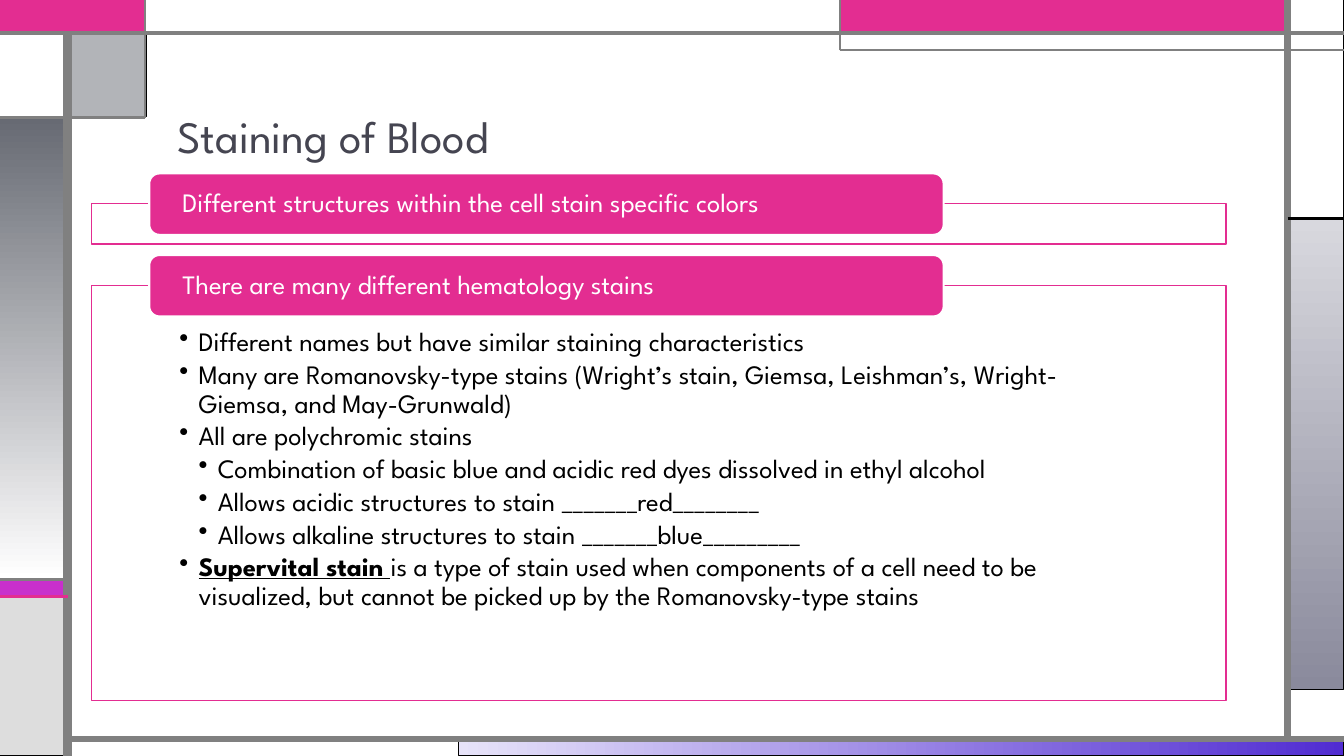
from dataclasses import dataclass

from lxml import etree
from pptx import Presentation
from pptx.dml.color import RGBColor
from pptx.enum.shapes import MSO_CONNECTOR, MSO_SHAPE
from pptx.enum.text import MSO_ANCHOR, PP_ALIGN
from pptx.oxml.ns import qn
from pptx.util import Inches, Pt

RECTANGLE = MSO_SHAPE.RECTANGLE
ROUNDED = MSO_SHAPE.ROUNDED_RECTANGLE
STRAIGHT = MSO_CONNECTOR.STRAIGHT
TOP, MIDDLE, BOTTOM = MSO_ANCHOR.TOP, MSO_ANCHOR.MIDDLE, MSO_ANCHOR.BOTTOM
LEFT = PP_ALIGN.LEFT


@dataclass(frozen=True)
class Theme:
    font: str = "League Spartan"
    title_size: int = 32
    body_size: int = 19
    title: str = "454551"
    pink: str = "E32D91"
    blue: str = "4EA6DC"
    purple: str = "C830CC"
    slate: str = "676A73"
    light: str = "DDDDDD"
    gray: str = "808080"
    white: str = "FFFFFF"
    black: str = "000000"
    lavender: tuple = ("E7E3F9", "502CD1")
    mist: tuple = ("D8D8DE", "8A8A9C")
    fade: tuple = ("676A73", "FFFFFF")


THEME = Theme()

# Frame grid lines, in inches
WIDTH, HEIGHT = 13.33, 7.5
RAIL, TAB, BANNER, RIGHT = 0.67, 1.44, 8.33, 12.77
BAR, STEP, CORNER, FLOOR = 0.33, 0.5, 1.17, 7.33
SHELF, STRIPE, STRIPE_END = 2.17, 5.75, 5.92

# Panels: top of the outline, its height, heading
PANELS = [
    (2.02, 0.4, "Different structures within the cell stain specific colors"),
    (2.83, 4.12, "There are many different hematology stains"),
]

# Bullets: level, emphasized lead, text
BULLETS = [
    (1, "", "Different names but have similar staining characteristics"),
    (1, "", "Many are Romanovsky-type stains (Wright’s stain, Giemsa, "
            "Leishman’s, Wright-Giemsa, and May-Grunwald)"),
    (1, "", "All are polychromic stains"),
    (2, "", "Combination of basic blue and acidic red dyes dissolved in ethyl alcohol"),
    (2, "", "Allows acidic structures to stain _______red________"),
    (2, "", "Allows alkaline structures to stain _______blue_________"),
    (1, "Supervital stain ", "is a type of stain used when components of a cell need to be "
                             "visualized, but cannot be picked up by the Romanovsky-type stains"),
]


def rgb(color):
    return RGBColor.from_string(color)


def set_alpha(shape, percent):
    color = shape.fill._xPr.find(qn("a:solidFill"))[0]
    etree.SubElement(color, qn("a:alpha"), val=str(percent * 1000))


def add_block(slide, box, fill, line=THEME.black, weight=0.75, kind=RECTANGLE, angle=270, alpha=100):
    """Add a preset shape; a pair of colors as fill makes a gradient."""
    shape = slide.shapes.add_shape(kind, *map(Inches, box))
    shape.shadow.inherit = False
    if isinstance(fill, tuple):
        shape.fill.gradient()
        shape.fill.gradient_angle = angle
        for stop, color in zip(shape.fill.gradient_stops, fill):
            stop.color.rgb = rgb(color)
    else:
        shape.fill.solid()
        shape.fill.fore_color.rgb = rgb(fill)
        if alpha < 100:
            set_alpha(shape, alpha)
    shape.line.color.rgb = rgb(line)
    shape.line.width = Pt(weight)
    return shape


def add_rule(slide, start, end, weight, color=THEME.gray):
    rule = slide.shapes.add_connector(STRAIGHT, *map(Inches, start + end))
    rule.line.color.rgb = rgb(color)
    rule.line.width = Pt(weight)
    etree.SubElement(rule._element.spPr, qn("a:effectLst"))


def set_frame(shape, anchor, margins):
    frame = shape.text_frame
    frame.word_wrap = True
    frame.vertical_anchor = anchor
    frame.margin_left, frame.margin_top, frame.margin_right, frame.margin_bottom = map(Inches, margins)
    return frame


def format_paragraph(paragraph, color, size=THEME.body_size, space_after=0):
    paragraph.alignment = LEFT
    paragraph.line_spacing = 0.9
    paragraph.space_after = Pt(space_after)
    for run in paragraph.runs:
        run.font.name = THEME.font
        run.font.size = Pt(size)
        run.font.color.rgb = rgb(color)


def set_bullet(paragraph, level):
    paragraph.level = level
    properties = paragraph._p.get_or_add_pPr()
    properties.set("marL", str(Inches(0.19 * level)))
    properties.set("indent", str(Inches(-0.19)))
    etree.SubElement(properties, qn("a:buChar"), char="•")


def add_frame(slide):
    # Colored blocks along the edges
    add_block(slide, (4.55, FLOOR, 8.78, 0.17), THEME.lavender, angle=0)
    add_block(slide, (RIGHT, SHELF, 0.56, 4.67), THEME.mist)
    add_block(slide, (0, STRIPE, RAIL, 0.17), THEME.purple)
    add_block(slide, (0, STRIPE_END, RAIL, 1.58), THEME.light)
    add_block(slide, (RIGHT, 0, 0.56, SHELF), THEME.white)
    add_block(slide, (BANNER, 0, 4.44, BAR), THEME.pink, THEME.blue)
    add_block(slide, (RAIL, BAR, 0.78, 0.83), THEME.slate, alpha=50)
    add_block(slide, (0, CORNER, RAIL, 4.58), THEME.fade)
    add_block(slide, (0, BAR, RAIL, 0.83), THEME.white)
    add_block(slide, (0, 0, TAB, BAR), THEME.pink, THEME.pink, 1.5)
    add_block(slide, (TAB, 0, 6.89, BAR), THEME.white, THEME.gray)

    # Rules over the blocks
    add_rule(slide, (RAIL, HEIGHT), (RAIL, BAR), 6)
    add_rule(slide, (RAIL, FLOOR), (WIDTH, FLOOR), 4.5)
    add_rule(slide, (RIGHT, FLOOR), (RIGHT, 0), 4.5)
    add_rule(slide, (0, BAR), (WIDTH, BAR), 3)
    add_rule(slide, (WIDTH, STEP), (BANNER, STEP), 1.5)
    add_rule(slide, (BANNER, STEP), (BANNER, 0), 1.5)
    add_rule(slide, (RIGHT, SHELF), (WIDTH, SHELF), 2.25, THEME.black)
    add_rule(slide, (TAB, 0), (TAB, CORNER), 1.5)
    add_rule(slide, (TAB, CORNER), (0, CORNER), 2.25)
    add_rule(slide, (RAIL, STRIPE), (0, STRIPE), 2.25)
    add_rule(slide, (RAIL, STRIPE_END), (0, STRIPE_END), 2.25, THEME.pink)


def add_title(slide, text):
    box = slide.shapes.add_textbox(*map(Inches, (1.66, 0.42, 10.5, 1.25)))
    frame = set_frame(box, BOTTOM, (0.1, 0.05, 0.1, 0.05))
    frame.text = text
    format_paragraph(frame.paragraphs[0], THEME.title, THEME.title_size)


def add_panel(slide, top, height, heading):
    """Add an outline with a heading pill across its top; return the outline."""
    outline = add_block(slide, (0.91, top, 11.25, height), THEME.white, THEME.pink, 1, alpha=90)
    pill = add_block(slide, (1.48, top - 0.3, 7.88, 0.61), THEME.pink, THEME.white, 1.5, ROUNDED)
    frame = set_frame(pill, MIDDLE, (0.3, 0, 0.3, 0))
    frame.text = heading
    format_paragraph(frame.paragraphs[0], THEME.white)
    return outline


def add_bullets(shape, bullets):
    frame = set_frame(shape, TOP, (0.87, 0.43, 0.87, 0.15))
    for index, (level, lead, text) in enumerate(bullets):
        paragraph = frame.add_paragraph() if index else frame.paragraphs[0]
        if lead:
            run = paragraph.add_run()
            run.text = lead
            run.font.bold = run.font.underline = True
        paragraph.add_run().text = text
        format_paragraph(paragraph, THEME.black, space_after=2.85)
        set_bullet(paragraph, level)


def main():
    presentation = Presentation()
    presentation.slide_width, presentation.slide_height = Inches(WIDTH), Inches(HEIGHT)
    slide = presentation.slides.add_slide(presentation.slide_layouts[6])
    add_frame(slide)
    add_title(slide, "Staining of Blood")
    outlines = [add_panel(slide, *panel) for panel in PANELS]
    add_bullets(outlines[-1], BULLETS)
    presentation.save("out.pptx")


if __name__ == "__main__":
    main()
